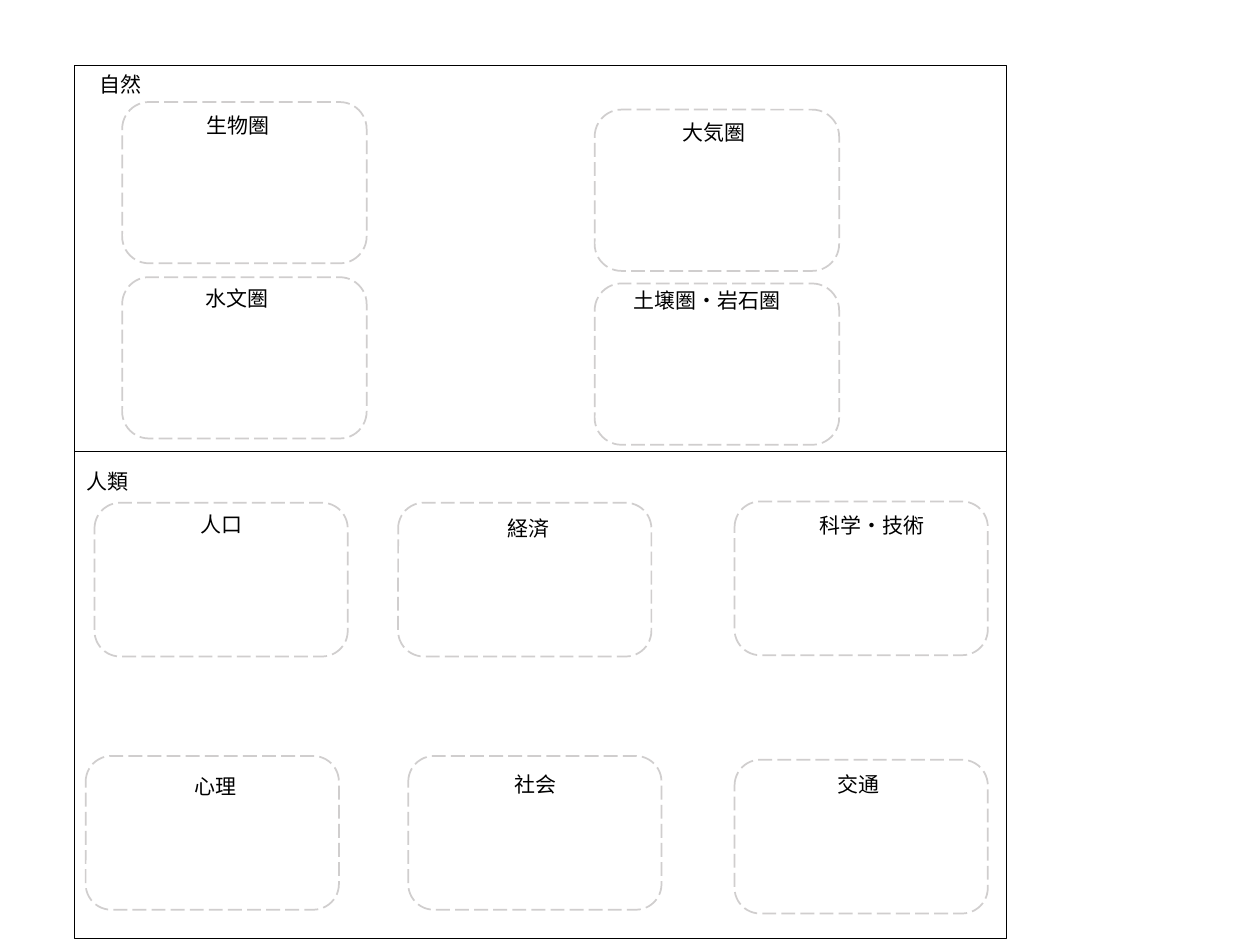
from pptx import Presentation
from pptx.dml.color import RGBColor
from pptx.enum.dml import MSO_LINE
from pptx.enum.shapes import MSO_SHAPE
from pptx.enum.text import MSO_ANCHOR, MSO_AUTO_SIZE, PP_ALIGN
from pptx.util import Pt

RECTANGLE = MSO_SHAPE.RECTANGLE
ROUNDED = MSO_SHAPE.ROUNDED_RECTANGLE
LONG_DASH = MSO_LINE.LONG_DASH
MIDDLE = MSO_ANCHOR.MIDDLE
CENTER = PP_ALIGN.CENTER
GROW = MSO_AUTO_SIZE.SHAPE_TO_FIT_TEXT

BLACK = RGBColor(0x00, 0x00, 0x00)
WHITE = RGBColor(0xFF, 0xFF, 0xFF)
GREY = RGBColor(0xD0, 0xCE, 0xCE)

EMU_PER_PX = 9144
SLIDE_SIZE = (1000, 750)
NATURE_SIZE = (194, 128)
HUMAN_SIZE = (201, 122)
NATURE_LABEL_HEIGHT = 51
HUMAN_LABEL_HEIGHT = 64

PANELS = [(59, 52, 740, 306), (59, 358, 740, 387)]
CAPTIONS = [("自然", 69, 52, 264, 30), ("人類", 59, 367, 295, 30)]

NATURE_SPHERES = [
    ("生物圏", (97, 81), (111, 74, 156)),
    ("水文圏", (97, 220), (110, 211, 157)),
    ("大気圏", (472, 87), (496, 79, 142)),
    ("土壌圏・岩石圏", (472, 225), (467, 213, 188)),
]
HUMAN_FIELDS = [
    ("人口", (75, 399), (102, 384, 147)),
    ("経済", (316, 399), (340, 387, 159)),
    ("科学・技術", (583, 398), (603, 385, 178)),
    ("心理", (68, 600), (77, 592, 188)),
    ("社会", (324, 600), (336, 590, 178)),
    ("交通", (583, 603), (592, 590, 178)),
]


class SphereMap:
    """Draws panels, captions and dashed boxes on one slide in one style."""

    def __init__(self, slide, font="Calibri", size=12):
        self.slide = slide
        self.font = font
        self.size = Pt(size)

    def add_shape(self, kind, *frame):
        shape = self.slide.shapes.add_shape(kind, *map(to_emu, frame))
        shape.shadow.inherit = False
        shape.fill.background()
        return shape

    def set_text(self, text_frame, text):
        text_frame.text = text
        text_frame.word_wrap = True
        font = text_frame.paragraphs[0].runs[0].font
        font.name = self.font
        font.size = self.size
        font.color.rgb = BLACK

    def panel(self, *frame):
        line = self.add_shape(RECTANGLE, *frame).line
        line.color.rgb = BLACK
        line.width = Pt(0.25)

    def caption(self, text, *frame):
        text_frame = self.slide.shapes.add_textbox(*map(to_emu, frame)).text_frame
        self.set_text(text_frame, text)
        text_frame.auto_size = GROW

    def dashed_box(self, *frame):
        box = self.add_shape(ROUNDED, *frame)
        box.fill.solid()
        box.fill.fore_color.rgb = WHITE
        box.line.color.rgb = GREY
        box.line.width = Pt(1)
        box.line.dash_style = LONG_DASH

    def label(self, text, *frame):
        shape = self.add_shape(ROUNDED, *frame)
        shape.line.fill.background()
        self.set_text(shape.text_frame, text)
        shape.text_frame.vertical_anchor = MIDDLE
        shape.text_frame.paragraphs[0].alignment = CENTER

    def group(self, items, box_size, label_height):
        for text, position, label_frame in items:
            self.dashed_box(*position, *box_size)
            self.label(text, *label_frame, label_height)


def to_emu(px):
    return px * EMU_PER_PX


def main():
    presentation = Presentation()
    presentation.slide_width, presentation.slide_height = map(to_emu, SLIDE_SIZE)
    slide = presentation.slides.add_slide(presentation.slide_layouts[6])
    sphere_map = SphereMap(slide)
    for frame in PANELS:
        sphere_map.panel(*frame)
    for caption in CAPTIONS:
        sphere_map.caption(*caption)
    sphere_map.group(NATURE_SPHERES, NATURE_SIZE, NATURE_LABEL_HEIGHT)
    sphere_map.group(HUMAN_FIELDS, HUMAN_SIZE, HUMAN_LABEL_HEIGHT)
    presentation.save("out.pptx")


if __name__ == "__main__":
    main()
